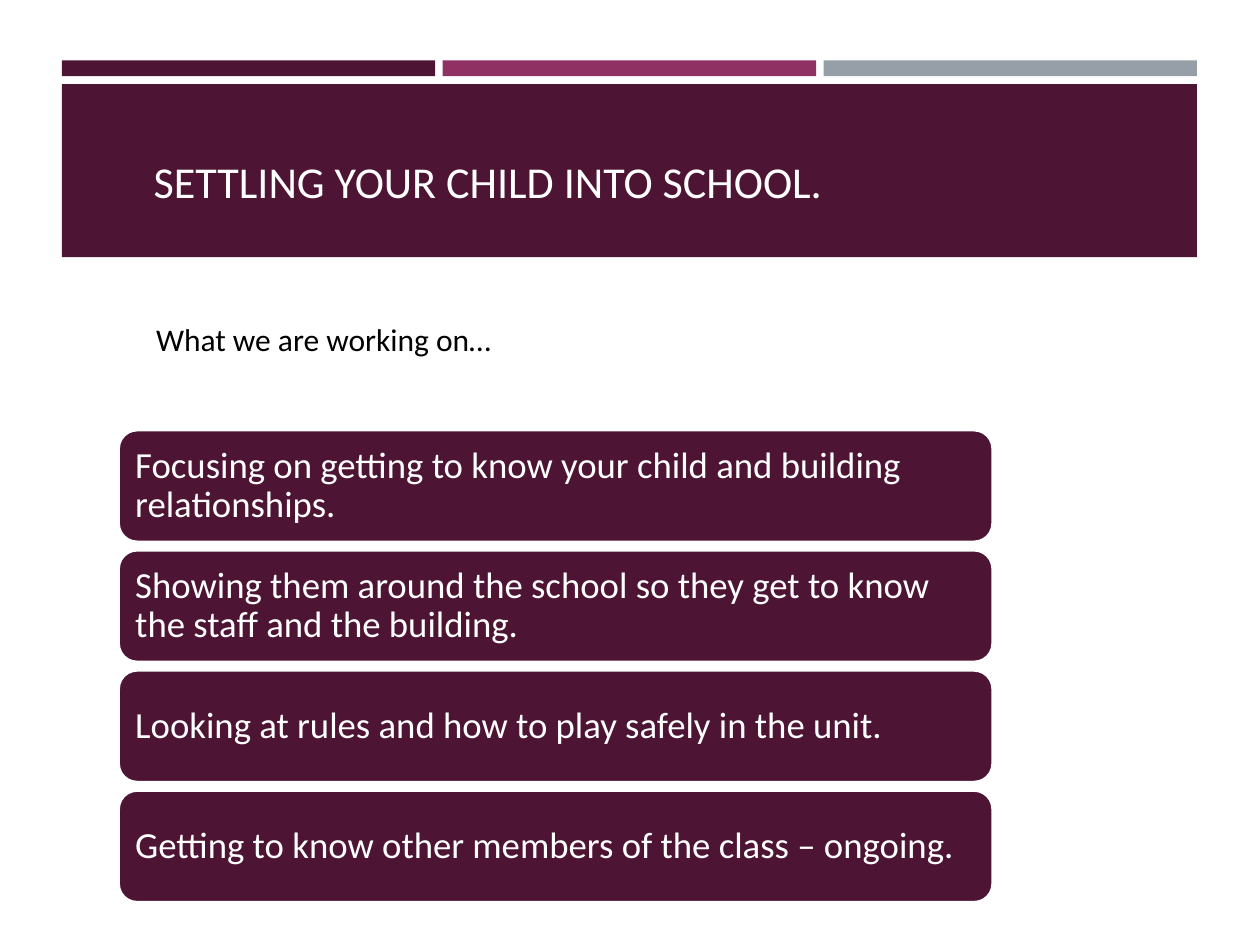
import dataclasses

import pptx
import pptx.dml.color
import pptx.enum.shapes
import pptx.enum.text
import pptx.util

SHAPE = pptx.enum.shapes.MSO_SHAPE
ANCHOR = pptx.enum.text.MSO_ANCHOR
ALIGN = pptx.enum.text.PP_ALIGN
WIDE, HIGH = 10, 7.5


@dataclasses.dataclass(frozen=True)
class Theme:
    plum: str = "4D1434"
    rose: str = "903163"
    grey: str = "969FA7"
    white: str = "FFFFFF"
    black: str = "000000"
    font: str = "Calibri"
    title: float = 25.2
    card: float = 21
    intro: float = 18


THEME = Theme()


def color(code):
    return pptx.dml.color.RGBColor.from_string(code)


def place(box):
    """Turn a box in percent of the slide into lengths."""
    sides = (WIDE, HIGH, WIDE, HIGH)
    return [pptx.util.Inches(part * side / 100) for part, side in zip(box, sides)]


def inner(box, left, top, wide, high):
    """Give the box that covers the given shares of an outer box."""
    x, y, w, h = box
    return x + left * w, y + top * h, wide * w, high * h


def split(size, count, gap):
    """List the offsets and the size of equal parts with a gap between."""
    part = (size - gap * (count - 1)) / count
    return [i * (part + gap) for i in range(count)], part


def set_all(thing, values):
    for name, value in values.items():
        setattr(thing, name, value)


def draw(slide, kind, box, fill):
    shape = slide.shapes.add_shape(kind, *place(box))
    shape.shadow.inherit = False
    shape.fill.solid()
    shape.fill.fore_color.rgb = color(fill)
    shape.line.fill.background()
    return shape


def write(shape, text, size, ink, anchor, **para):
    frame = shape.text_frame
    set_all(frame, {"word_wrap": True, "vertical_anchor": anchor})
    line = frame.paragraphs[0]
    set_all(line, {"alignment": ALIGN.LEFT, **para})
    run = line.add_run()
    run.text = text
    set_all(run.font, {"name": THEME.font, "size": pptx.util.Pt(size)})
    run.font.color.rgb = color(ink)


def add_text(slide, box, *args):
    write(slide.shapes.add_textbox(*place(box)), *args)


def header(slide, box, title):
    x, y, w, h = box
    fills = (THEME.plum, THEME.rose, THEME.grey)
    steps, wide = split(w, len(fills), 0.6)
    for step, fill in zip(steps, fills):
        draw(slide, SHAPE.RECTANGLE, (x + step, y, wide, 0.08 * h), fill)
    draw(slide, SHAPE.RECTANGLE, inner(box, 0, 0.12, 1, 0.88), THEME.plum)
    add_text(slide, inner(box, 0.07, 0.28, 0.78, 0.5), title,
             THEME.title, THEME.white, ANCHOR.BOTTOM)


def intro(slide, box, text):
    add_text(slide, box, text, THEME.intro, THEME.black, ANCHOR.TOP)


def cards(slide, box, texts):
    x, y, w, h = box
    steps, high = split(h, len(texts), 0.85)
    pad = pptx.util.Inches(0.09)
    sides = ("left", "top", "right", "bottom")
    for step, text in zip(steps, texts):
        card = draw(slide, SHAPE.ROUNDED_RECTANGLE,
                    (x, y + step, w, high), THEME.plum)
        card.line.color.rgb = color(THEME.white)
        card.line.width = pptx.util.Pt(1.75)
        set_all(card.text_frame, {f"margin_{side}": pad for side in sides})
        write(card, text, THEME.card, THEME.white, ANCHOR.MIDDLE,
              line_spacing=0.9)


def main():
    deck = pptx.Presentation()
    set_all(deck, {"slide_width": pptx.util.Inches(WIDE),
                   "slide_height": pptx.util.Inches(HIGH)})
    slide = deck.slides.add_slide(deck.slide_layouts[6])
    header(slide, (4.9, 6.4, 90.1, 20.8), "SETTLING YOUR CHILD INTO SCHOOL.")
    cards(slide, (9.4, 45.5, 69.4, 50), [
        "Focusing on getting to know your child and building relationships.",
        "Showing them around the school so they get to know the staff and the building.",
        "Looking at rules and how to play safely in the unit.",
        "Getting to know other members of the class – ongoing.",
    ])
    intro(slide, (11.4, 33.2, 73.2, 5.3), "What we are working on…")
    deck.save("out.pptx")


if __name__ == "__main__":
    main()
